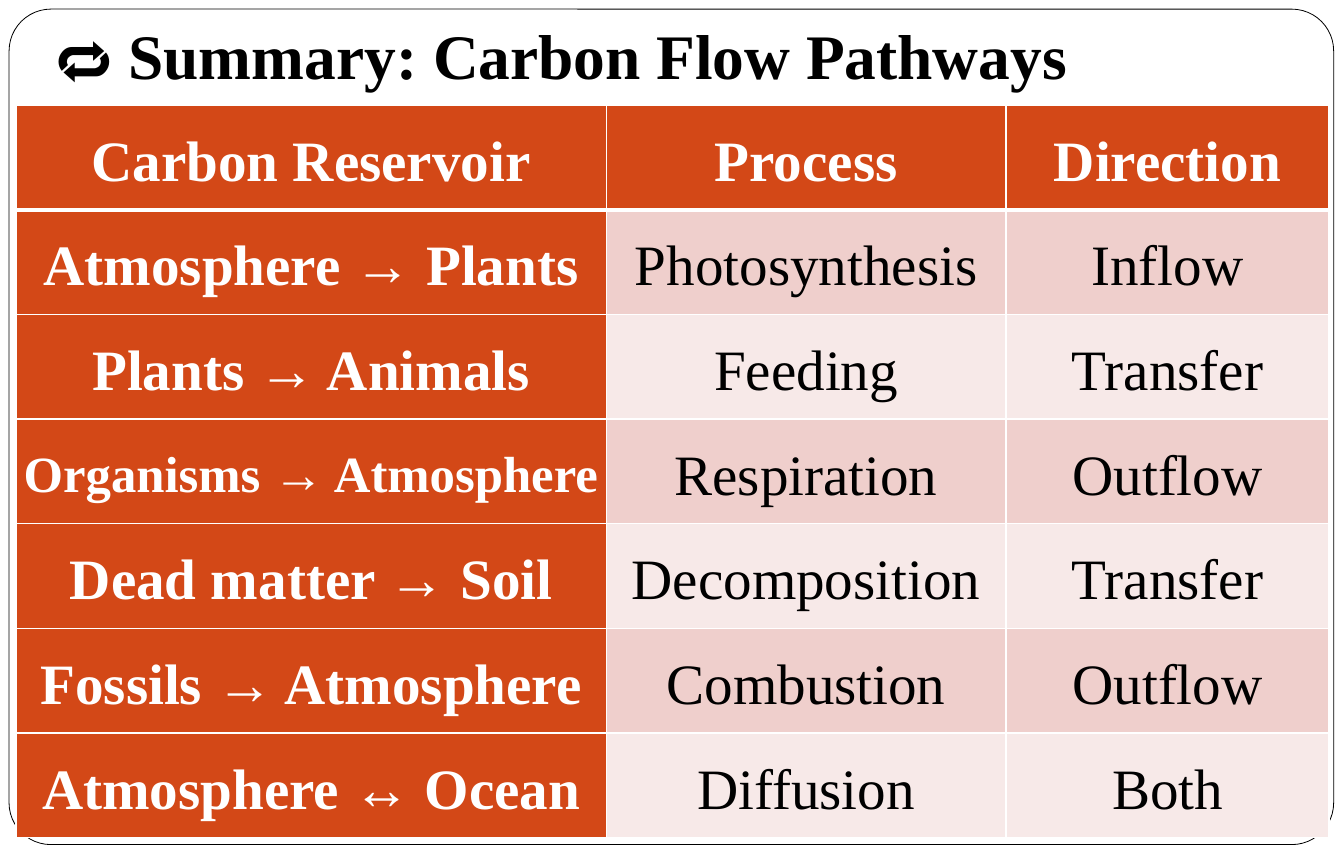
from dataclasses import dataclass

from lxml import etree
from pptx import Presentation
from pptx.dml.color import RGBColor
from pptx.enum.shapes import MSO_SHAPE
from pptx.enum.text import MSO_ANCHOR, PP_ALIGN
from pptx.oxml.ns import qn
from pptx.util import Emu, Pt

CENTER, LEFT = PP_ALIGN.CENTER, PP_ALIGN.LEFT
MIDDLE, BOTTOM = MSO_ANCHOR.MIDDLE, MSO_ANCHOR.BOTTOM
ROUNDED = MSO_SHAPE.ROUNDED_RECTANGLE
EMU_PER_PX = 9144  # 100 px to the inch


@dataclass(frozen=True)
class Theme:
    font: str = "Times New Roman"
    black: str = "000000"
    white: str = "FFFFFF"
    accent: str = "D34817"
    bands: tuple[str, str] = ("EFCFCC", "F7E9E8")
    title_size: int = 40
    cell_size: int = 36
    long_size: int = 32
    rule: int = 1
    header_rule: int = 3


@dataclass(frozen=True)
class Pathway:
    reservoir: str
    process: str
    direction: str
    reservoir_size: int = Theme.cell_size


THEME = Theme()
HEADER = Pathway("Carbon Reservoir", "Process", "Direction")
PATHWAYS = [
    Pathway("Atmosphere → Plants", "Photosynthesis", "Inflow"),
    Pathway("Plants → Animals", "Feeding", "Transfer"),
    Pathway("Organisms → Atmosphere", "Respiration", "Outflow", THEME.long_size),
    Pathway("Dead matter → Soil", "Decomposition", "Transfer"),
    Pathway("Fossils → Atmosphere", "Combustion", "Outflow"),
    Pathway("Atmosphere ↔ Ocean", "Diffusion", "Both"),
]
COLUMN_WIDTHS = (517, 350, 283)
TABLE_LEFT, TABLE_TOP, TABLE_HEIGHT = 14, 92, 642


def px(n: int) -> Emu:
    return Emu(n * EMU_PER_PX)


def rgb(color: str) -> RGBColor:
    return RGBColor.from_string(color)


def write(tf, text: str, *, size: int, color: str, bold: bool = False,
          align=LEFT, spacing: float = 1.0, after: int = 0) -> None:
    p = tf.paragraphs[0]
    p.alignment, p.line_spacing, p.space_after = align, spacing, Pt(after)
    r = p.add_run()
    r.text = text
    r.font.name, r.font.size, r.font.bold = THEME.font, Pt(size), bold
    r.font.color.rgb = rgb(color)


def set_borders(cell, bottom: int) -> None:
    """Rule all four sides; the bottom one has its own width in points."""
    tc_pr = cell._tc.get_or_add_tcPr()
    widths = {"a:lnL": THEME.rule, "a:lnR": THEME.rule,
              "a:lnT": THEME.rule, "a:lnB": bottom}
    for i, (tag, width) in enumerate(widths.items()):
        ln = etree.Element(qn(tag), w=str(Pt(width)))
        fill = etree.SubElement(ln, qn("a:solidFill"))
        etree.SubElement(fill, qn("a:srgbClr"), val=THEME.white)
        tc_pr.insert(i, ln)


def add_frame(slide) -> None:
    sp = slide.shapes.add_shape(ROUNDED, px(8), px(8), px(1160), px(732))
    sp.adjustments[0] = 0.05
    sp.shadow.inherit = False
    sp.fill.solid()
    sp.fill.fore_color.rgb = rgb(THEME.white)
    sp.line.color.rgb = rgb(THEME.black)
    sp.line.width = Pt(0.5)


def add_title(slide, text: str) -> None:
    sp = slide.shapes.add_textbox(px(40), px(8), px(1060), px(83))
    tf = sp.text_frame
    tf.word_wrap, tf.vertical_anchor = True, BOTTOM
    tf.margin_left = tf.margin_right = tf.margin_bottom = px(10)
    tf.margin_top = px(5)
    write(tf, text, size=THEME.title_size, color=THEME.black, bold=True)


def fill_cell(cell, text: str, size: int, row: int, col: int) -> None:
    strong = row == 0 or col == 0
    cell.fill.solid()
    cell.fill.fore_color.rgb = rgb(THEME.accent if strong else THEME.bands[(row - 1) % 2])
    cell.vertical_anchor = MIDDLE
    cell.margin_left = cell.margin_right = px(1)
    cell.margin_top = cell.margin_bottom = px(1)
    write(cell.text_frame, text, size=size, bold=strong,
          color=THEME.white if strong else THEME.black,
          align=CENTER, spacing=1.15, after=8)
    set_borders(cell, THEME.header_rule if row == 0 else THEME.rule)


def add_pathway_table(slide) -> None:
    rows = [HEADER, *PATHWAYS]
    table = slide.shapes.add_table(
        len(rows), len(COLUMN_WIDTHS), px(TABLE_LEFT), px(TABLE_TOP),
        px(sum(COLUMN_WIDTHS)), px(TABLE_HEIGHT)).table
    table.first_col = True
    for column, width in zip(table.columns, COLUMN_WIDTHS):
        column.width = px(width)
    for i, pathway in enumerate(rows):
        texts = (pathway.reservoir, pathway.process, pathway.direction)
        for j, text in enumerate(texts):
            size = pathway.reservoir_size if j == 0 else THEME.cell_size
            fill_cell(table.cell(i, j), text, size, i, j)


def main() -> None:
    prs = Presentation()
    prs.slide_width, prs.slide_height = px(1177), px(750)
    slide = prs.slides.add_slide(prs.slide_layouts[6])
    add_frame(slide)
    add_title(slide, "🔁 Summary: Carbon Flow Pathways")
    add_pathway_table(slide)
    prs.save("out.pptx")


if __name__ == "__main__":
    main()
